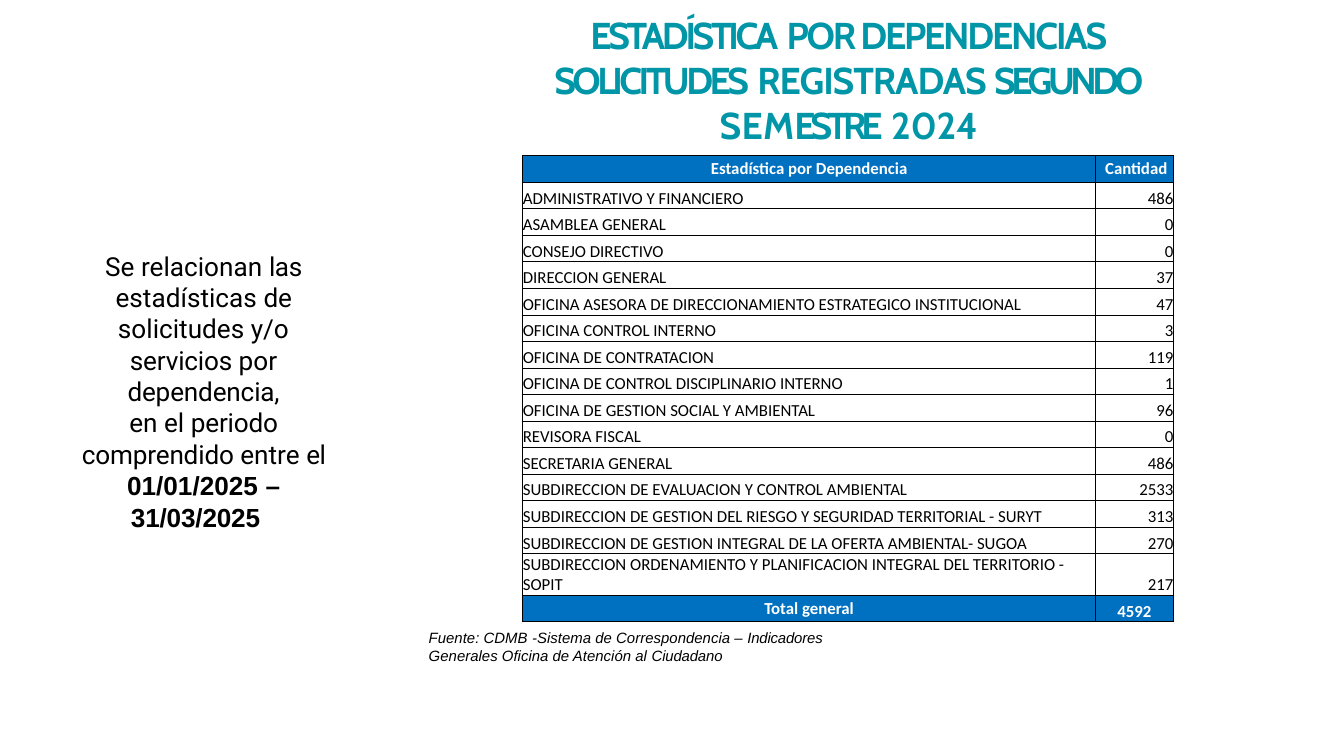
from lxml import etree
from pptx import Presentation
from pptx.dml.color import RGBColor
from pptx.enum.text import MSO_ANCHOR, MSO_AUTO_SIZE, PP_ALIGN
from pptx.oxml.ns import qn
from pptx.util import Inches, Pt

LEFT, CENTER, RIGHT = PP_ALIGN.LEFT, PP_ALIGN.CENTER, PP_ALIGN.RIGHT
TOP, MIDDLE, BOTTOM = MSO_ANCHOR.TOP, MSO_ANCHOR.MIDDLE, MSO_ANCHOR.BOTTOM
NO_AUTOFIT = MSO_AUTO_SIZE.NONE

WIDTH = 10
HEIGHT = WIDTH * 9 / 16
TEAL, BLUE, BLACK, WHITE = "0096A7", "0070C0", "000000", "FFFFFF"

TABLE_BOX = (3.89, 1.16, 4.84, 3.47)
NAME_WIDTH = 4.26
TALL_ROW, TALL_HEIGHT = 15, 0.31

TITLE = [
    ("ESTADÍSTICA", -1.8), (" ", 0), ("POR DEPENDENCIAS", -1.2), (" ", 0),
    ("SOLICITUDES", -1.9), (" ", 0), ("REGISTRADAS ", -0.6), ("SEGUNDO", -2.4),
    (" ", 0), ("SEM", 0.1), ("ESTRE", -2.7), (" ", 0), ("2024", -0.2),
]
SOURCE = [
    ("Fuente: CDMB ", 0), ("-", -0.1), ("Sistema de Correspondencia – ", 0),
    ("Indicadores ", -0.1), ("Generales Oficina de Atención al ", 0),
    ("Ciudadano", -0.1),
]
SUMMARY = [
    ("Se relacionan ", 0), ("las ", -0.2), ("estadísticas ", 0), ("de ", -0.2),
    ("solicitudes y/o ", 0), ("servicios ", -0.1), ("por ", 0),
    ("dependencia,", -0.1),
]
PERIOD = [("en el ", 0), ("periodo comprendido ", -0.1), ("entre ", 0), ("el ", -0.3)]
START_DATE = [("01/01/2025 ", 0), ("–", -0.5)]
END_DATE = [("31/03/2025", -0.1)]

ROWS = [
    ("Estadística por Dependencia", " Cantidad"),
    ("ADMINISTRATIVO Y FINANCIERO", "486"),
    ("ASAMBLEA GENERAL", "0"),
    ("CONSEJO DIRECTIVO", "0"),
    ("DIRECCION GENERAL", "37"),
    ("OFICINA ASESORA DE DIRECCIONAMIENTO ESTRATEGICO INSTITUCIONAL", "47"),
    ("OFICINA CONTROL INTERNO", "3"),
    ("OFICINA DE CONTRATACION", "119"),
    ("OFICINA DE CONTROL DISCIPLINARIO INTERNO", "1"),
    ("OFICINA DE GESTION SOCIAL Y AMBIENTAL", "96"),
    ("REVISORA FISCAL", "0"),
    ("SECRETARIA GENERAL", "486"),
    ("SUBDIRECCION DE EVALUACION Y CONTROL AMBIENTAL", "2533"),
    ("SUBDIRECCION DE GESTION DEL RIESGO Y SEGURIDAD TERRITORIAL - SURYT", "313"),
    ("SUBDIRECCION DE GESTION INTEGRAL DE LA OFERTA AMBIENTAL- SUGOA", "270"),
    ("SUBDIRECCION ORDENAMIENTO Y PLANIFICACION INTEGRAL DEL TERRITORIO - SOPIT", "217"),
    ("Total general", "4592"),
]


def color(value):
    return RGBColor.from_string(value)


def format_span(span, font, size, ink, bold=False, italic=False):
    span.font.name = font
    span.font.size = Pt(size)
    span.font.color.rgb = color(ink)
    span.font.bold = bold
    span.font.italic = italic


def add_spans(para, spans, font, size, ink, bold=False, italic=False):
    for text, spacing in spans:
        span = para.add_run()
        span.text = text
        format_span(span, font, size, ink, bold, italic)
        span.font._element.set("spc", str(round(spacing * 100)))


def format_para(para, align, left=0.01, right=0):
    para.alignment = align
    para.line_spacing = 1.0
    para.space_before = Pt(0)
    properties = para._p.get_or_add_pPr()
    properties.set("marL", str(Inches(left)))
    properties.set("marR", str(Inches(right)))
    properties.set("indent", "0")
    etree.SubElement(properties, qn("a:buNone"))


def place_box(box, left, top, width, height, inset):
    box.left, box.top = Inches(left), Inches(top)
    box.width, box.height = Inches(width), Inches(height)
    frame = box.text_frame
    frame.word_wrap = True
    frame.auto_size = NO_AUTOFIT
    frame.vertical_anchor = TOP
    frame.margin_left = frame.margin_right = frame.margin_bottom = 0
    frame.margin_top = Inches(inset)
    return frame


def fill_title(page):
    frame = place_box(page.shapes.title, 4.1, 0.09, 4.42, 1.03, 0)
    para = frame.paragraphs[0]
    format_para(para, CENTER)
    add_spans(para, TITLE, "Cabin", 20, TEAL, bold=True)


def fill_summary(page):
    frame = place_box(page.placeholders[1], 0.48, 1.85, 2.06, 1.9, 0.01)
    summary, period, end = frame.paragraphs[0], frame.add_paragraph(), frame.add_paragraph()
    format_para(summary, CENTER)
    format_para(period, CENTER, left=0.12, right=0.11)
    format_para(end, CENTER, left=0, right=0.11)
    add_spans(summary, SUMMARY, "Roboto", 14, BLACK)
    add_spans(period, PERIOD, "Roboto", 14, BLACK)
    add_spans(period, START_DATE, "Arial", 14, BLACK, bold=True)
    add_spans(end, END_DATE, "Arial", 14, BLACK, bold=True)


def add_source(page):
    box = page.shapes.add_textbox(0, 0, 0, 0)
    frame = place_box(box, 3.18, 4.67, 2.98, 0.3, 0.01)
    para = frame.paragraphs[0]
    format_para(para, LEFT)
    add_spans(para, SOURCE, "Arial", 8, BLACK, italic=True)


def add_borders(cell):
    properties = cell._tc.get_or_add_tcPr()
    for side in ("lnL", "lnR", "lnT", "lnB"):
        line = etree.SubElement(properties, qn(f"a:{side}"), w=str(Pt(0.5)))
        fill = etree.SubElement(line, qn("a:solidFill"))
        etree.SubElement(fill, qn("a:srgbClr"), val=BLACK)


def fill_cell(cell, text, align, anchor, banner):
    cell.margin_left = cell.margin_right = cell.margin_top = cell.margin_bottom = 0
    cell.vertical_anchor = anchor
    add_borders(cell)
    if banner:
        cell.fill.solid()
        cell.fill.fore_color.rgb = color(BLUE)
    else:
        cell.fill.background()
    cell.text_frame.text = text
    para = cell.text_frame.paragraphs[0]
    para.alignment = align
    format_span(para.runs[0], "Calibri", 9, WHITE if banner else BLACK, bold=banner)


def add_statistics(page):
    width, height = TABLE_BOX[2:]
    last = len(ROWS) - 1
    table = page.shapes.add_table(len(ROWS), 2, *map(Inches, TABLE_BOX)).table
    table.columns[0].width = Inches(NAME_WIDTH)
    table.columns[1].width = Inches(width - NAME_WIDTH)
    row_height = (height - TALL_HEIGHT) / last
    for index, (name, amount) in enumerate(ROWS):
        table.rows[index].height = Inches(TALL_HEIGHT if index == TALL_ROW else row_height)
        banner = index in (0, last)
        name_cell, amount_cell = table.cell(index, 0), table.cell(index, 1)
        fill_cell(name_cell, name, CENTER if banner else LEFT,
                  MIDDLE if banner else BOTTOM, banner)
        fill_cell(amount_cell, amount, CENTER if banner else RIGHT,
                  MIDDLE if index == 0 else BOTTOM, banner)


def main():
    deck = Presentation()
    deck.slide_width, deck.slide_height = Inches(WIDTH), Inches(HEIGHT)
    page = deck.slides.add_slide(deck.slide_layouts[1])
    fill_title(page)
    add_source(page)
    fill_summary(page)
    add_statistics(page)
    deck.save("out.pptx")


if __name__ == "__main__":
    main()
